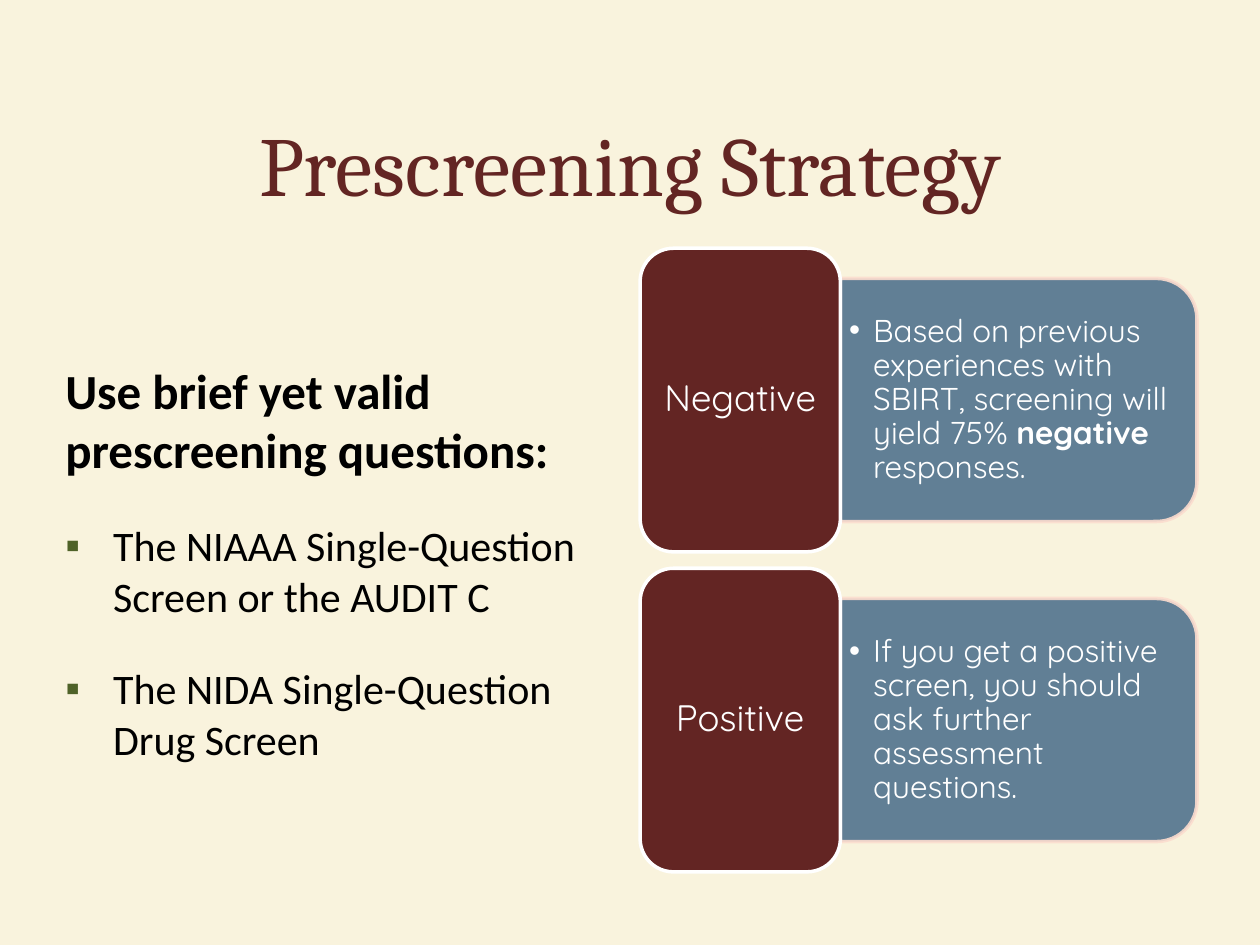
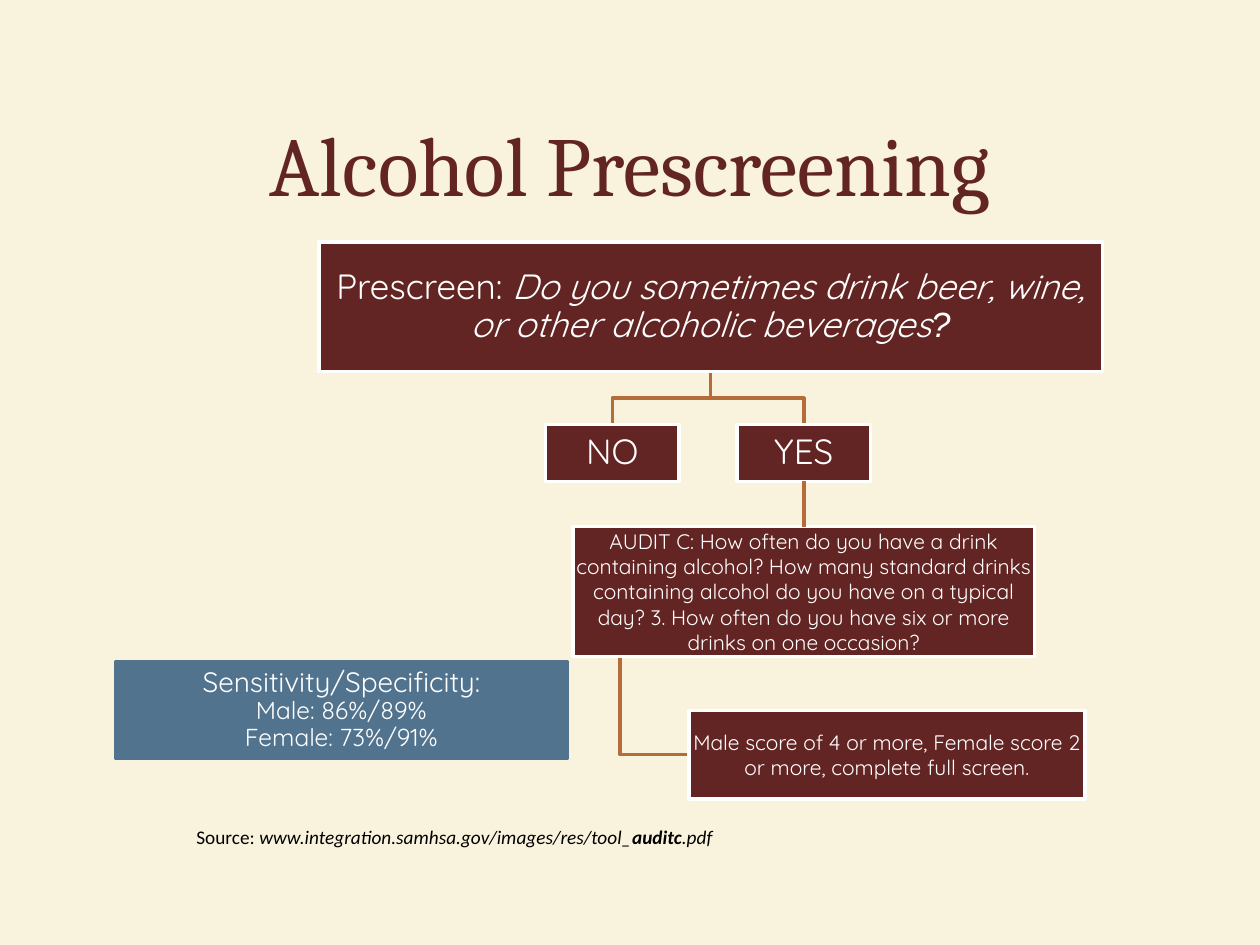
from lxml.etree import SubElement
from pptx import Presentation
from pptx.dml.color import RGBColor
from pptx.enum.shapes import MSO_CONNECTOR, MSO_SHAPE
from pptx.enum.text import MSO_ANCHOR, PP_ALIGN
from pptx.oxml.ns import qn
from pptx.util import Inches, Pt

CREAM, MAROON, SLATE, WHITE = "F9F3DD", "632523", "51738E", "FFFFFF"
BLACK, GREEN, PINK, COPPER = "000000", "4F6228", "FCDDCF", "B46C3A"
TITLE_FONT, BODY_FONT, DIAGRAM_FONT = "Cambria", "Calibri", "Quicksand"


# Shared helpers
def rgb(value):
    return RGBColor.from_string(value)


def box_of(left, top, width, height):
    return [Inches(length) for length in (left, top, width, height)]


def set_line(outline, color, width=2):
    outline.color.rgb = rgb(color)
    outline.width = Pt(width)


def add_alpha(color_parent, percent):
    color = color_parent.find(".//" + qn("a:srgbClr"))
    SubElement(color, qn("a:alpha"), val=str(percent * 1000))


def add_bullet(paragraph, char, color, indent):
    props = paragraph._p.get_or_add_pPr()
    props.set("marL", str(Inches(indent)))
    props.set("indent", str(-Inches(indent)))
    SubElement(SubElement(props, qn("a:buClr")), qn("a:srgbClr"), val=color)
    SubElement(props, qn("a:buFont"), typeface="Arial")
    SubElement(props, qn("a:buChar"), char=char)


def set_font(paragraph, name, size, color, bold=None):
    font = paragraph.font
    font.name, font.size, font.bold = name, Pt(size), bold
    font.color.rgb = rgb(color)


def add_runs(paragraph, pieces):
    """Add (text, style) pieces, where style holds what differs from the paragraph."""
    for text, style in pieces:
        run = paragraph.add_run()
        run.text = text
        for attribute, value in style.items():
            setattr(run.font, attribute, value)


def prepare_frame(owner, anchor=MSO_ANCHOR.MIDDLE, side=0.1, end=0.05):
    frame = owner.text_frame
    frame.word_wrap = True
    frame.vertical_anchor = anchor
    frame.margin_left = frame.margin_right = Inches(side)
    frame.margin_top = frame.margin_bottom = Inches(end)
    return frame


def add_block(slide, kind, box, fill, line):
    block = slide.shapes.add_shape(kind, *box_of(*box))
    block.shadow.inherit = False
    block.fill.solid()
    block.fill.fore_color.rgb = rgb(fill)
    set_line(block.line, line)
    return block


def centre_text(paragraph, pieces, size, spacing=0.9):
    paragraph.alignment = PP_ALIGN.CENTER
    paragraph.line_spacing = spacing
    set_font(paragraph, DIAGRAM_FONT, size, WHITE)
    add_runs(paragraph, pieces)


def add_titled_slide(prs, title_text):
    slide = prs.slides.add_slide(prs.slide_layouts[5])
    title = slide.shapes.title
    title.left, title.top, title.width, title.height = box_of(0, 0.67, 10, 1.25)
    heading = prepare_frame(title).paragraphs[0]
    heading.text = title_text
    heading.alignment = PP_ALIGN.CENTER
    set_font(heading, TITLE_FONT, 48, MAROON)
    return slide


# Slide 1: advice on the left, results on the right
def add_advice(slide, box, lead, screens):
    advice = slide.shapes.add_textbox(*box_of(*box))
    frame = prepare_frame(advice, MSO_ANCHOR.TOP)
    paragraph = frame.paragraphs[0]
    paragraph.text = lead
    paragraph.space_after = Pt(24)
    set_font(paragraph, BODY_FONT, 28, BLACK, bold=True)
    for screen in screens:
        paragraph = frame.add_paragraph()
        paragraph.text = screen
        paragraph.space_after = Pt(24)
        add_bullet(paragraph, "▪", GREEN, 0.38)
        set_font(paragraph, BODY_FONT, 24, BLACK)


def add_result(slide, box, label, pieces):
    left, top, width, height = box
    label_width, panel_height = 1.59, 1.93
    panel_left, panel_width = left + label_width, width - label_width
    middle = top + height / 2

    # Panel: a top-rounded shape turned so that its round end faces right
    panel = add_block(slide, MSO_SHAPE.ROUND_2_SAME_RECTANGLE,
                      (panel_left + (panel_width - panel_height) / 2,
                       middle - panel_width / 2, panel_height, panel_width),
                      SLATE, PINK)
    panel.rotation = 90
    for part in (panel._element.spPr.find(qn("a:solidFill")),
                 panel._element.spPr.find(qn("a:ln"))):
        add_alpha(part, 90)

    # Explanation on the panel
    note = slide.shapes.add_textbox(
        *box_of(panel_left, middle - 0.87, panel_width - 0.1, 1.74))
    paragraph = prepare_frame(note, side=0.07, end=0.04).paragraphs[0]
    paragraph.line_spacing = 0.9
    add_bullet(paragraph, "•", WHITE, 0.19)
    set_font(paragraph, DIAGRAM_FONT, 18, WHITE)
    add_runs(paragraph, pieces)

    # Result name
    name = add_block(slide, MSO_SHAPE.ROUNDED_RECTANGLE,
                     (left, top, label_width, height), MAROON, WHITE)
    frame = prepare_frame(name, side=0.09, end=0.04)
    centre_text(frame.paragraphs[0], [(label, {})], 21)


def build_strategy(prs):
    slide = add_titled_slide(prs, "Prescreening Strategy")
    add_advice(slide, (0.42, 2.81, 4.83, 3.27),
               "Use brief yet valid prescreening questions:",
               ["The NIAAA Single-Question Screen or the AUDIT C",
                "The NIDA Single-Question\vDrug Screen"])
    results = [
        ("Negative", [("Based on previous experiences with SBIRT, screening will yield 75% ", {}),
                      ("negative ", {"bold": True}), ("responses.", {})]),
        ("Positive", [("If you get a positive screen, you should ask further "
                       "assessment questions.", {})]),
    ]
    for row, (label, pieces) in enumerate(results):
        add_result(slide, (5.08, 1.97 + row * 2.54, 4.42, 2.41), label, pieces)


# Slide 2: decision tree
def add_branch(slide, *points):
    corners = [(Inches(x), Inches(y)) for x, y in points]
    builder = slide.shapes.build_freeform(*corners[0], scale=1.0)
    builder.add_line_segments(corners[1:], close=False)
    branch = builder.convert_to_shape()
    branch.shadow.inherit = False
    branch.fill.background()
    set_line(branch.line, COPPER)


def add_step(slide, box, pieces, size, spacing=0.9):
    step = add_block(slide, MSO_SHAPE.RECTANGLE, box, MAROON, WHITE)
    frame = prepare_frame(step, side=0.01, end=0.01)
    centre_text(frame.paragraphs[0], pieces, size, spacing)
    return step


def add_tree(slide, left, top):
    question_x, no_x, yes_x = left + 3.11, left + 2.33, left + 3.85
    question_bottom, answer_top = top + 1.03, top + 1.45
    audit_top, score_top = top + 2.26, top + 3.72
    answer_width, audit_width = 1.06, 3.66
    fork_y = (question_bottom + answer_top) / 2
    score_left, score_y, stem_x = left + 2.94, score_top + 0.35, left + 2.39

    # Branches lie behind the steps
    for answer_x in (no_x, yes_x):
        add_branch(slide, (question_x, question_bottom), (question_x, fork_y),
                   (answer_x, fork_y), (answer_x, answer_top))
    add_branch(slide, (stem_x, audit_top + 1.03), (stem_x, score_y), (score_left, score_y))

    # Steps
    add_step(slide, (left, top, 6.22, 1.03),
             [("Prescreen: ", {}),
              ("Do you sometimes drink beer, wine, or other alcoholic beverages",
               {"italic": True}),
              ("?", {"italic": True, "name": "Arial"})], 20)
    no, yes = [add_step(slide, (x - answer_width / 2, answer_top, answer_width, 0.45),
                        [(answer, {})], 20)
               for x, answer in ((no_x, "NO"), (yes_x, "YES"))]
    audit = add_step(slide, (yes_x - audit_width / 2, audit_top, audit_width, 1.03),
                     [("AUDIT C: How often do you have a drink containing alcohol? "
                       "How many standard drinks containing alcohol do you have on a "
                       "typical day? 3. How often do you have six or more drinks on "
                       "one occasion?", {})], 12, 1.0)
    add_step(slide, (score_left, score_top, 3.14, 0.7),
             [("Male score of 4 or more, Female score 2 or more, "
               "complete full screen.", {})], 12, 1.0)

    # Straight link from YES to the AUDIT C questions
    link = slide.shapes.add_connector(MSO_CONNECTOR.STRAIGHT, 0, 0, 0, 0)
    link.begin_connect(yes, 2)
    link.end_connect(audit, 0)
    set_line(link.line, COPPER)
    SubElement(link._element.spPr, qn("a:effectLst"))


def add_accuracy(slide, box):
    accuracy = add_block(slide, MSO_SHAPE.RECTANGLE, box, SLATE, SLATE)
    frame = prepare_frame(accuracy)
    lines = [("Sensitivity/Specificity:", 16), ("Male: 86%/89%", 14), ("Female: 73%/91%", 14)]
    for index, (text, size) in enumerate(lines):
        paragraph = frame.add_paragraph() if index else frame.paragraphs[0]
        centre_text(paragraph, [(text, {})], size)


def add_source(slide, box):
    source = slide.shapes.add_textbox(*box_of(*box))
    paragraph = prepare_frame(source, MSO_ANCHOR.TOP).paragraphs[0]
    set_font(paragraph, BODY_FONT, 11, BLACK)
    add_runs(paragraph, [("Source: ", {}),
                         ("www.integration.samhsa.gov/images/res/tool_", {"italic": True}),
                         ("auditc", {"italic": True, "bold": True}),
                         (".pdf", {"italic": True})])


def build_alcohol(prs):
    slide = add_titled_slide(prs, "Alcohol Prescreening")
    add_tree(slide, 2.53, 1.92)
    add_accuracy(slide, (0.92, 5.25, 3.58, 0.77))
    add_source(slide, (1.46, 6.5, 6.81, 0.29))


def main():
    prs = Presentation()
    prs.slide_width, prs.slide_height = Inches(10), Inches(7.5)
    background = prs.slide_master.background.fill
    background.solid()
    background.fore_color.rgb = rgb(CREAM)
    build_strategy(prs)
    build_alcohol(prs)
    prs.save("out.pptx")


if __name__ == "__main__":
    main()
